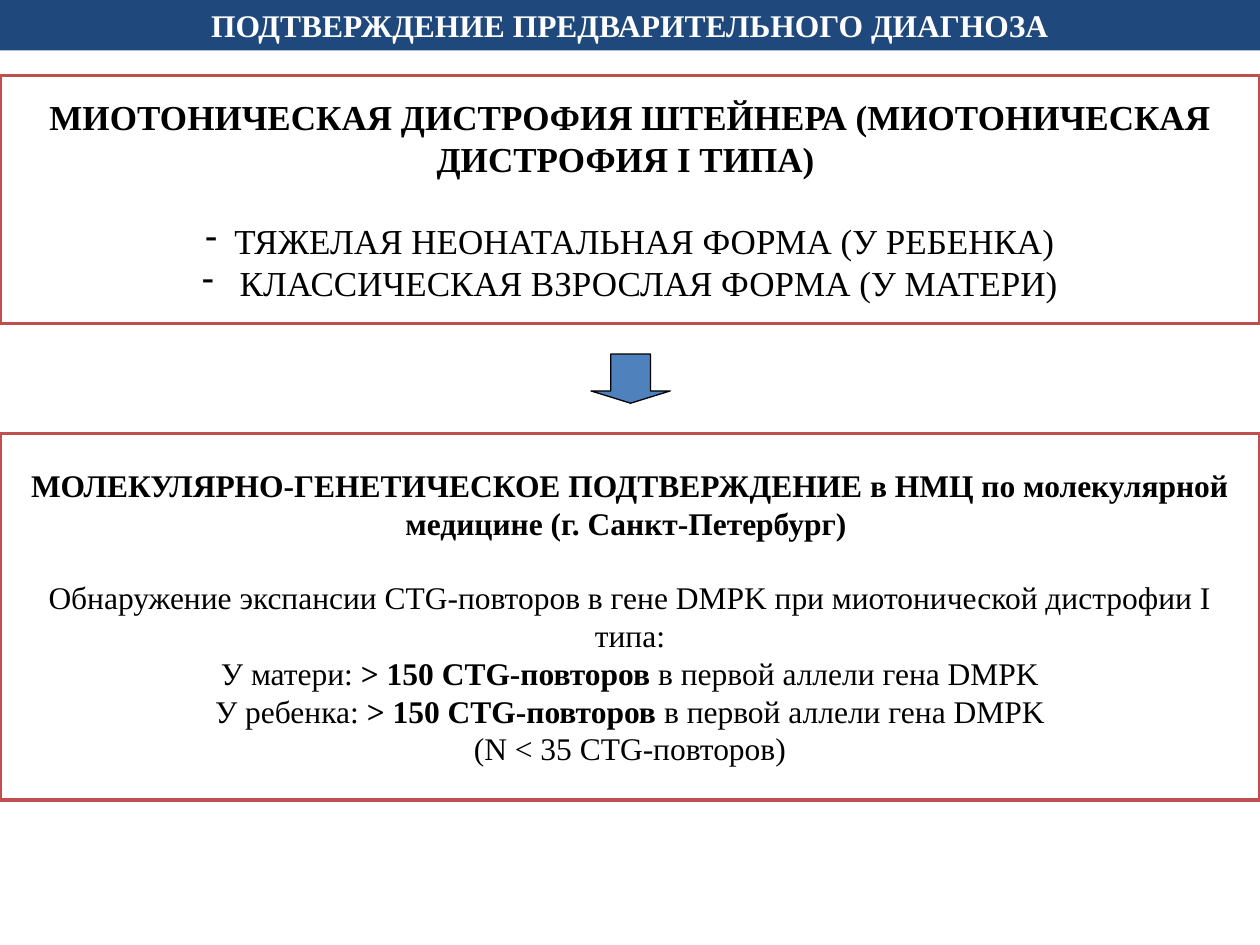
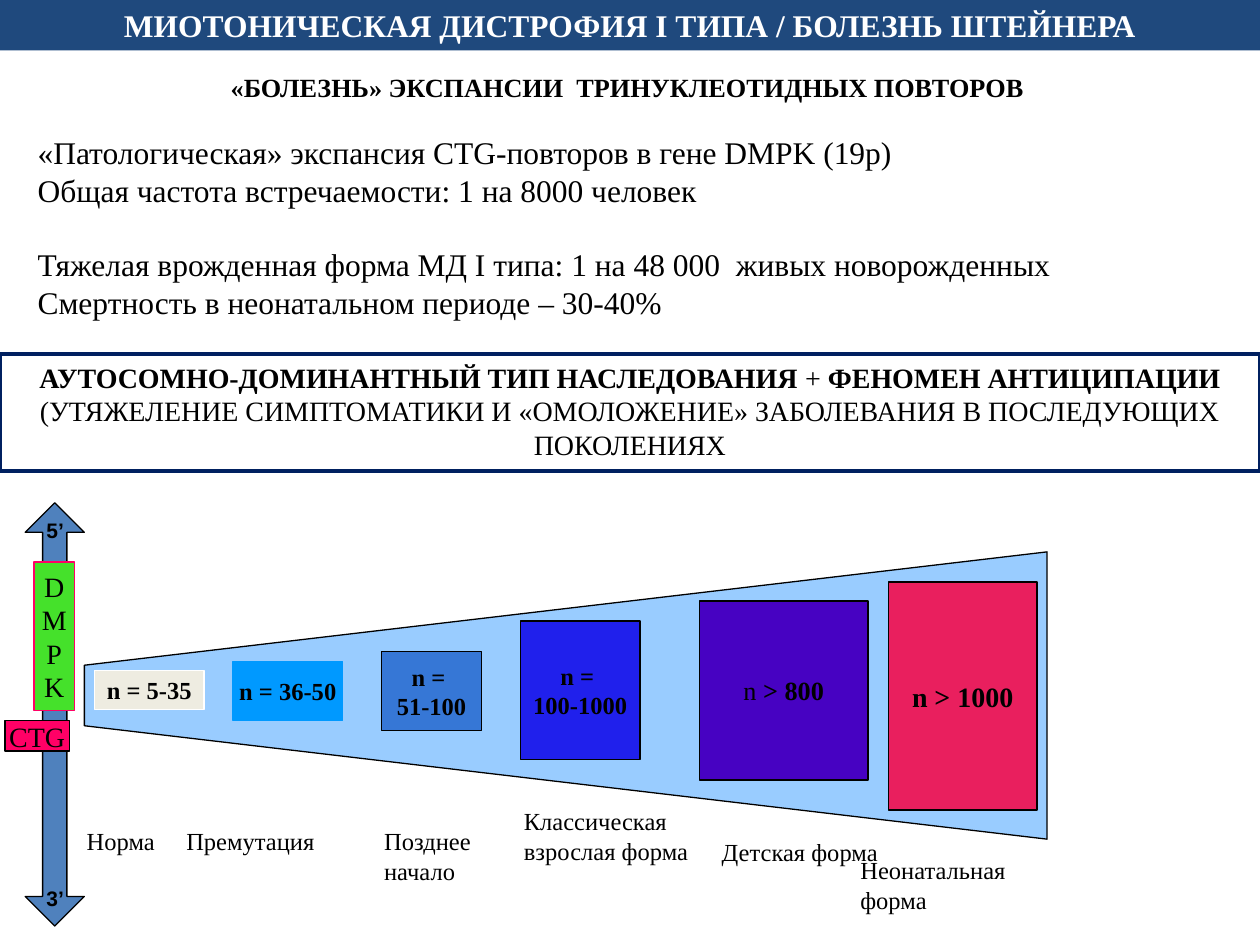
"""Build two slides on confirming and explaining type I myotonic dystrophy."""
from lxml import etree
from pptx import Presentation
from pptx.dml.color import RGBColor
from pptx.enum.shapes import MSO_SHAPE
from pptx.enum.text import MSO_ANCHOR, PP_ALIGN
from pptx.oxml.ns import qn
from pptx.util import Inches, Pt

RECTANGLE = MSO_SHAPE.RECTANGLE
DOWN_ARROW = MSO_SHAPE.DOWN_ARROW
UP_DOWN_ARROW = MSO_SHAPE.UP_DOWN_ARROW
TOP, MIDDLE = MSO_ANCHOR.TOP, MSO_ANCHOR.MIDDLE
LEFT, CENTER = PP_ALIGN.LEFT, PP_ALIGN.CENTER
WIDTH, HEIGHT = 10, 7.5
LINE_HEIGHT = 1.15
BULLET_INDENT = 0.23
COLORS = {
    "white": "FFFFFF", "black": "000000", "banner": "1F497D",
    "red": "C0504D", "navy": "002060", "arrow": "4F81BD",
    "gene": "45E12B", "repeat": "FF0066", "wedge": "99CCFF",
    "normal": "EEECE1", "premutation": "0099FF", "late": "3677D6",
    "adult": "2020EC", "child": "4702C2", "neonatal": "E91F5E",
}

STAGES = [
    ((0.75, 5.32, 0.87, 0.31), "normal", "white", 14, "**n = 5-35**"),
    ((1.85, 5.25, 0.87, 0.47), "premutation", "premutation", 14, "**n = 36-50**"),
    ((3.03, 5.17, 0.79, 0.63), "late", "black", 14, "**n = **\n**51-100**"),
    ((4.13, 4.93, 0.95, 1.1), "adult", "black", 14, "**n = **\n**100-1000**"),
    ((5.55, 4.77, 1.34, 1.42), "child", "black", 15, "n **> 800**"),
    ((7.05, 4.62, 1.18, 1.81), "neonatal", "black", 16, "**n > 1000**"),
]
STAGE_LABELS = [
    ((0.59, 6.51, 0.87, 0.33), "Норма"),
    ((1.38, 6.51, 1.42, 0.33), "Премутация"),
    ((2.95, 6.51, 1.02, 0.57), "Позднее начало"),
    ((4.06, 6.35, 1.57, 0.8), "Классическая взрослая форма"),
    ((5.63, 6.59, 1.57, 0.57), "Детская форма"),
    ((6.73, 6.74, 1.57, 0.57), "Неонатальная форма"),
]


def color(name):
    """Return the named colour."""
    return RGBColor.from_string(COLORS[name])


def write(frame, text, size=18, ink="black", font="Times New Roman",
          align=CENTER, gap=0, bullet=None):
    """Add one paragraph per line; double asterisks switch bold on and off."""
    for line in text.split("\n"):
        paragraph = frame.paragraphs[0]
        if paragraph.runs:
            paragraph = frame.add_paragraph()
        if bullet:
            properties = paragraph._p.get_or_add_pPr()
            indent = Inches(BULLET_INDENT)
            properties.set("marL", str(indent))
            properties.set("indent", str(-indent))
            etree.SubElement(properties, qn("a:buChar")).set("char", bullet)
        paragraph.alignment = align
        if gap:
            paragraph.space_before = Pt(gap * LINE_HEIGHT)
        for index, part in enumerate(line.split("**")):
            if part:
                run = paragraph.add_run()
                run.text = part
                run.font.name = font
                run.font.size = Pt(size)
                run.font.bold = index % 2 == 1
                run.font.color.rgb = color(ink)


class Deck:
    """Hold the shared style and the current slide."""

    def __init__(self):
        """Start an empty presentation."""
        self.presentation = Presentation()
        self.presentation.slide_width = Inches(WIDTH)
        self.presentation.slide_height = Inches(HEIGHT)
        self.slide = None

    def add_slide(self, title):
        """Start a blank slide with the title banner."""
        layout = self.presentation.slide_layouts[6]
        self.slide = self.presentation.slides.add_slide(layout)
        banner = self.shape((0, 0, WIDTH, 0.4), "banner", anchor=TOP)
        write(banner, f"**{title}**", ink="white")

    def paint(self, shape, fill, line, weight):
        """Set fill and outline and remove the shadow."""
        shape.shadow.inherit = False
        shape.fill.solid()
        shape.fill.fore_color.rgb = color(fill)
        if line:
            shape.line.color.rgb = color(line)
            shape.line.width = Pt(weight)
        else:
            shape.line.fill.background()

    def shape(self, box, fill, line=None, weight=0.75, kind=RECTANGLE,
              adjustments=(), anchor=MIDDLE, wrap=True):
        """Add a preset shape and return its text frame."""
        shape = self.slide.shapes.add_shape(kind, *map(Inches, box))
        self.paint(shape, fill, line, weight)
        for index, value in enumerate(adjustments):
            shape.adjustments[index] = value
        shape.text_frame.vertical_anchor = anchor
        shape.text_frame.word_wrap = wrap
        return shape.text_frame

    def panel(self, top, height, line, anchor=MIDDLE):
        """Add a full-width outlined panel and return its text frame."""
        return self.shape((0, top, WIDTH, height), "white", line, 2, anchor=anchor)

    def tag(self, box, fill, line, text, size=16):
        """Add a small coloured box with centred text."""
        write(self.shape(box, fill, line, wrap=False), text, size)

    def text_box(self, box):
        """Add a wrapping text box and return its text frame."""
        frame = self.slide.shapes.add_textbox(*map(Inches, box)).text_frame
        frame.word_wrap = True
        return frame

    def polygon(self, points, fill, line):
        """Add a closed outline through the points."""
        corners = [(Inches(x), Inches(y)) for x, y in points]
        builder = self.slide.shapes.build_freeform(*corners[0])
        builder.add_line_segments(corners[1:], close=True)
        self.paint(builder.convert_to_shape(), fill, line, 0.75)


def build_diagnosis(deck):
    """Build the slide that confirms the diagnosis."""
    deck.add_slide("ПОДТВЕРЖДЕНИЕ ПРЕДВАРИТЕЛЬНОГО ДИАГНОЗА")
    disease = deck.panel(0.6, 1.97, "red")
    write(disease, "**МИОТОНИЧЕСКАЯ ДИСТРОФИЯ ШТЕЙНЕРА (МИОТОНИЧЕСКАЯ "
          "ДИСТРОФИЯ I ТИПА) **", 20)
    write(disease, "ТЯЖЕЛАЯ НЕОНАТАЛЬНАЯ ФОРМА (У РЕБЕНКА)", 20, gap=20, bullet="-")
    write(disease, " КЛАССИЧЕСКАЯ ВЗРОСЛАЯ ФОРМА (У МАТЕРИ)", 20, bullet="-")
    deck.shape((4.69, 2.81, 0.63, 0.39), "arrow", "black",
               kind=DOWN_ARROW, adjustments=(0.5, 0.25))
    genetics = deck.panel(3.44, 2.91, "red")
    write(genetics, "**МОЛЕКУЛЯРНО-ГЕНЕТИЧЕСКОЕ ПОДТВЕРЖДЕНИЕ в НМЦ по "
          "молекулярной медицине (г. Санкт-Петербург) **")
    write(genetics, "Обнаружение экспансии CTG-повторов в гене DMPK при "
          "миотонической дистрофии I типа:", gap=18)
    for person in ("матери", "ребенка"):
        write(genetics, f"У {person}: **> 150 CTG-повторов** в первой аллели гена DMPK")
    write(genetics, "(N < 35 CTG-повторов)")


def build_expansion(deck):
    """Build the slide about repeat expansion."""
    deck.add_slide("МИОТОНИЧЕСКАЯ ДИСТРОФИЯ I ТИПА / БОЛЕЗНЬ ШТЕЙНЕРА")
    facts = deck.text_box((0.2, 0.52, 9.61, 2.1))
    write(facts, "**«БОЛЕЗНЬ» ЭКСПАНСИИ  ТРИНУКЛЕОТИДНЫХ ПОВТОРОВ **", 15)
    write(facts, "«Патологическая» экспансия CTG-повторов в гене DMPK (19p)",
          align=LEFT, gap=15)
    write(facts, "Общая частота встречаемости: 1 на 8000 человек", align=LEFT)
    write(facts, "Тяжелая врожденная форма МД I типа: 1 на 48 000  живых "
          "новорожденных", align=LEFT, gap=18)
    write(facts, "Смертность в неонатальном периоде – 30-40%", align=LEFT)
    inheritance = deck.panel(2.81, 0.93, "navy", anchor=TOP)
    write(inheritance, "**АУТОСОМНО-ДОМИНАНТНЫЙ ТИП НАСЛЕДОВАНИЯ** + **ФЕНОМЕН "
          "АНТИЦИПАЦИИ** (УТЯЖЕЛЕНИЕ СИМПТОМАТИКИ И «ОМОЛОЖЕНИЕ» ЗАБОЛЕВАНИЯ "
          "В ПОСЛЕДУЮЩИХ ПОКОЛЕНИЯХ", 16)

    deck.shape((0.2, 3.99, 0.47, 3.36), "arrow", "black",
               kind=UP_DOWN_ARROW, adjustments=(0.5, 0.41))
    deck.tag((0.27, 4.46, 0.32, 1.18), "gene", "repeat", "\n".join("DMPK"))
    deck.tag((0.04, 5.72, 0.51, 0.24), "repeat", "black", "CTG")
    for top, end in ((4.06, "5’"), (6.98, "3’")):
        write(deck.text_box((0.27, top, 0.55, 0.3)), f"**{end}**", 12,
              font="Arial", align=LEFT)

    deck.polygon([(8.31, 4.38), (0.67, 5.28), (0.67, 5.76), (8.31, 6.66)],
                 "wedge", "black")
    for box, fill, line, size, text in STAGES:
        deck.tag(box, fill, line, text, size)
    for box, text in STAGE_LABELS:
        write(deck.text_box(box), text, 14, align=LEFT)


def main():
    """Build and save the presentation."""
    deck = Deck()
    build_diagnosis(deck)
    build_expansion(deck)
    deck.presentation.save("out.pptx")


if __name__ == "__main__":
    main()
